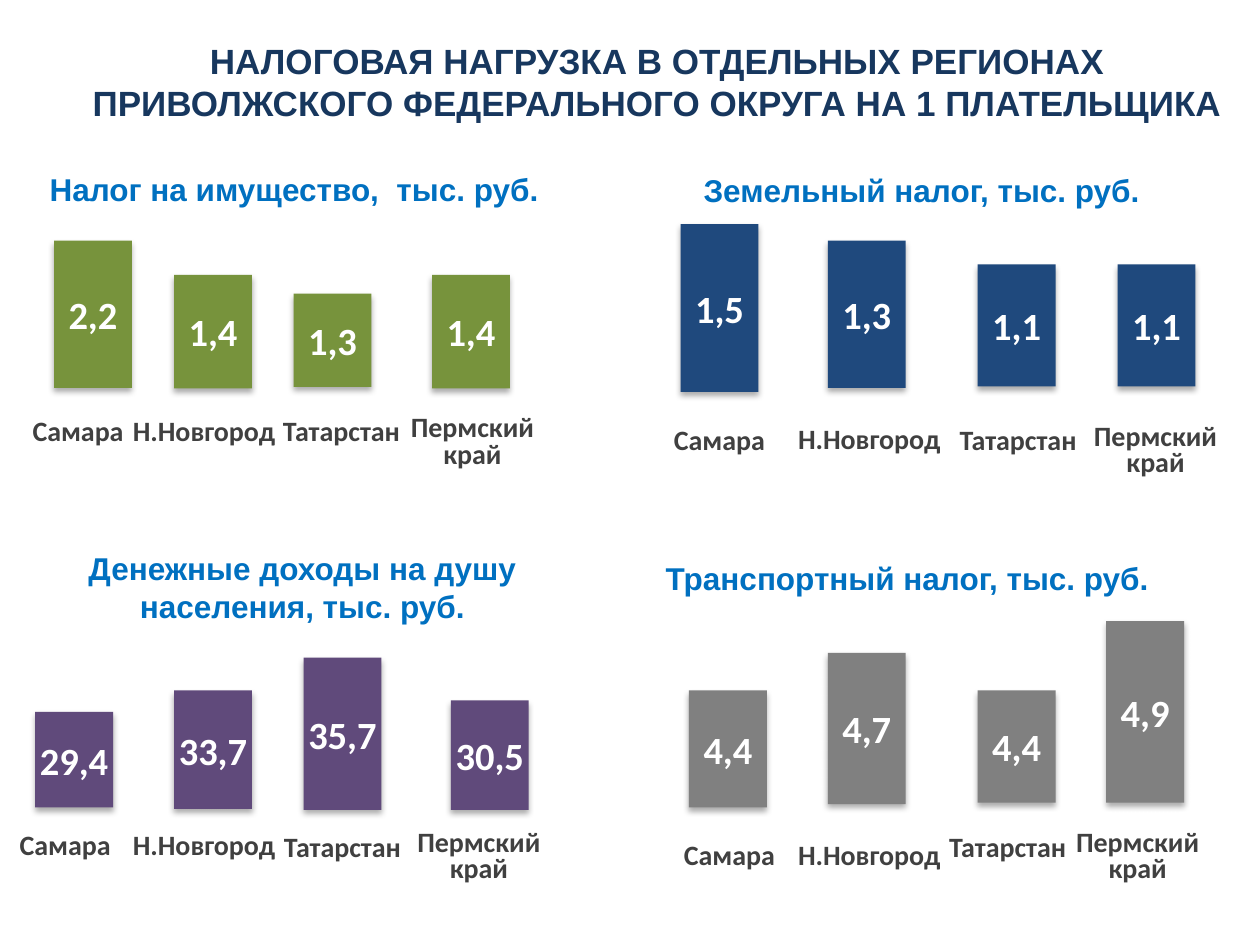
from dataclasses import dataclass
from typing import NamedTuple

from lxml.etree import SubElement
from pptx import Presentation
from pptx.dml.color import RGBColor
from pptx.enum.shapes import MSO_SHAPE
from pptx.enum.text import MSO_ANCHOR, MSO_AUTO_SIZE, PP_ALIGN
from pptx.oxml.ns import qn
from pptx.util import Cm, Pt


@dataclass(frozen=True)
class Theme:
    heading_font: str = "Arial"
    label_font: str = "Calibri"
    title_color: str = "17375E"
    heading_color: str = "0070C0"
    region_color: str = "404040"
    value_color: str = "FFFFFF"
    property_color: str = "77933C"
    income_color: str = "604A7B"
    land_color: str = "1F497D"
    transport_color: str = "808080"
    title_size: int = 20
    heading_size: int = 18
    value_size: int = 22
    region_size: int = 16
    title_spacing: int = 24
    region_spacing: int = 15


class Box(NamedTuple):
    """Position and size in centimetres."""
    left: float
    top: float
    width: float
    height: float

    def lengths(self):
        return [Cm(side) for side in self]


class Bar(NamedTuple):
    value: str
    left: float
    top: float
    height: float
    region_left: float
    region_top: float


class Panel(NamedTuple):
    heading: str
    heading_box: Box
    color: str
    bars: list[Bar]


THEME = Theme()
BAR_WIDTH = 1.57
REGION_WIDTH, REGION_HEIGHT = 2.03, 0.76
REGIONS = ["Самара", "Н.Новгород", "Татарстан", "Пермский\nкрай"]

TITLE = ("НАЛОГОВАЯ НАГРУЗКА В ОТДЕЛЬНЫХ РЕГИОНАХ "
         "ПРИВОЛЖСКОГО ФЕДЕРАЛЬНОГО ОКРУГА НА 1 ПЛАТЕЛЬЩИКА")
TITLE_BOX = Box(1.09, 0.66, 24.31, 1.8)

PANELS = [
    Panel("Налог на имущество,  тыс. руб.", Box(0.38, 3.12, 11.1, 1.37),
          THEME.property_color, [
              Bar("2,2", 1.09, 4.85, 2.97, 0.56, 8.36),
              Bar("1,4", 3.51, 5.54, 2.29, 3.1, 8.36),
              Bar("1,3", 5.92, 5.92, 1.88, 5.87, 8.36),
              Bar("1,4", 8.71, 5.54, 2.29, 8.51, 8.56)]),
    Panel("Земельный налог, тыс. руб.", Box(13.21, 3.15, 10.74, 1.37),
          THEME.land_color, [
              Bar("1,5", 13.72, 4.52, 3.38, 13.49, 8.56),
              Bar("1,3", 16.69, 4.85, 2.97, 16.51, 8.53),
              Bar("1,1", 19.71, 5.33, 2.46, 19.51, 8.56),
              Bar("1,1", 22.53, 5.33, 2.46, 22.28, 8.74)]),
    Panel("Денежные доходы на душу населения, тыс. руб.",
          Box(1.14, 11.15, 9.91, 1.37), THEME.income_color, [
              Bar("29,4", 0.71, 14.35, 1.93, 0.3, 16.71),
              Bar("33,7", 3.51, 13.92, 2.39, 3.1, 16.71),
              Bar("35,7", 6.12, 13.26, 3.07, 5.89, 16.76),
              Bar("30,5", 9.09, 14.12, 2.21, 8.64, 16.92)]),
    Panel("Транспортный налог, тыс. руб.", Box(13.06, 10.97, 10.46, 1.37),
          THEME.transport_color, [
              Bar("4,4", 13.89, 13.92, 2.36, 13.69, 16.92),
              Bar("4,7", 16.69, 13.16, 3.05, 16.51, 16.92),
              Bar("4,4", 19.71, 13.92, 2.26, 19.3, 16.76),
              Bar("4,9", 22.3, 12.52, 3.66, 21.92, 16.92)]),
]


def write(frame, text: str, font: str, size: int, color: str,
          spacing: int | None = None, wrap: bool = True,
          anchor: MSO_ANCHOR = MSO_ANCHOR.MIDDLE) -> None:
    """Fill a text frame with bold, centred text."""
    frame.text = text
    frame.auto_size = MSO_AUTO_SIZE.NONE
    frame.word_wrap = wrap
    frame.vertical_anchor = anchor
    for paragraph in frame.paragraphs:
        paragraph.alignment = PP_ALIGN.CENTER
        paragraph.space_before = Pt(0)
        if spacing:
            paragraph.line_spacing = Pt(spacing)
        for run in paragraph.runs:
            run.font.name = font
            run.font.size = Pt(size)
            run.font.bold = True
            run.font.color.rgb = RGBColor.from_string(color)


def add_soft_shadow(shape) -> None:
    """Cast a faint shadow straight down."""
    shape.shadow.inherit = False
    effects = shape.element.spPr.find(qn("a:effectLst"))
    shadow = SubElement(effects, qn("a:outerShdw"), blurRad=str(Pt(3.5)),
                        dist=str(Pt(2.2)), dir="5400000", rotWithShape="0")
    black = SubElement(shadow, qn("a:srgbClr"), val="000000")
    SubElement(black, qn("a:alpha"), val="32000")


def draw_bar(slide, bar: Bar, region: str, color: str) -> None:
    column_box = Box(bar.left, bar.top, BAR_WIDTH, bar.height)
    column = slide.shapes.add_shape(MSO_SHAPE.RECTANGLE, *column_box.lengths())
    column.fill.solid()
    column.fill.fore_color.rgb = RGBColor.from_string(color)
    column.line.fill.background()
    add_soft_shadow(column)
    frame = column.text_frame
    frame.margin_left = frame.margin_right = Cm(0)
    frame.margin_top = frame.margin_bottom = Cm(0)
    write(frame, bar.value, THEME.label_font, THEME.value_size,
          THEME.value_color)

    region_box = Box(bar.region_left, bar.region_top,
                     REGION_WIDTH, REGION_HEIGHT)
    region_label = slide.shapes.add_textbox(*region_box.lengths())
    write(region_label.text_frame, region, THEME.label_font,
          THEME.region_size, THEME.region_color, THEME.region_spacing,
          wrap=False)


def draw_panel(slide, panel: Panel) -> None:
    heading = slide.shapes.add_textbox(*panel.heading_box.lengths())
    write(heading.text_frame, panel.heading, THEME.heading_font,
          THEME.heading_size, THEME.heading_color)
    for bar, region in zip(panel.bars, REGIONS):
        draw_bar(slide, bar, region, panel.color)


def main() -> None:
    deck = Presentation()
    deck.slide_width, deck.slide_height = Cm(25.4), Cm(19.05)
    slide = deck.slides.add_slide(deck.slide_layouts[5])

    # Slide title
    title = slide.shapes.title
    title.left, title.top, title.width, title.height = TITLE_BOX.lengths()
    write(title.text_frame, TITLE, THEME.heading_font, THEME.title_size,
          THEME.title_color, THEME.title_spacing, anchor=MSO_ANCHOR.TOP)

    # Four groups of bars
    for panel in PANELS:
        draw_panel(slide, panel)

    deck.save("out.pptx")


if __name__ == "__main__":
    main()
